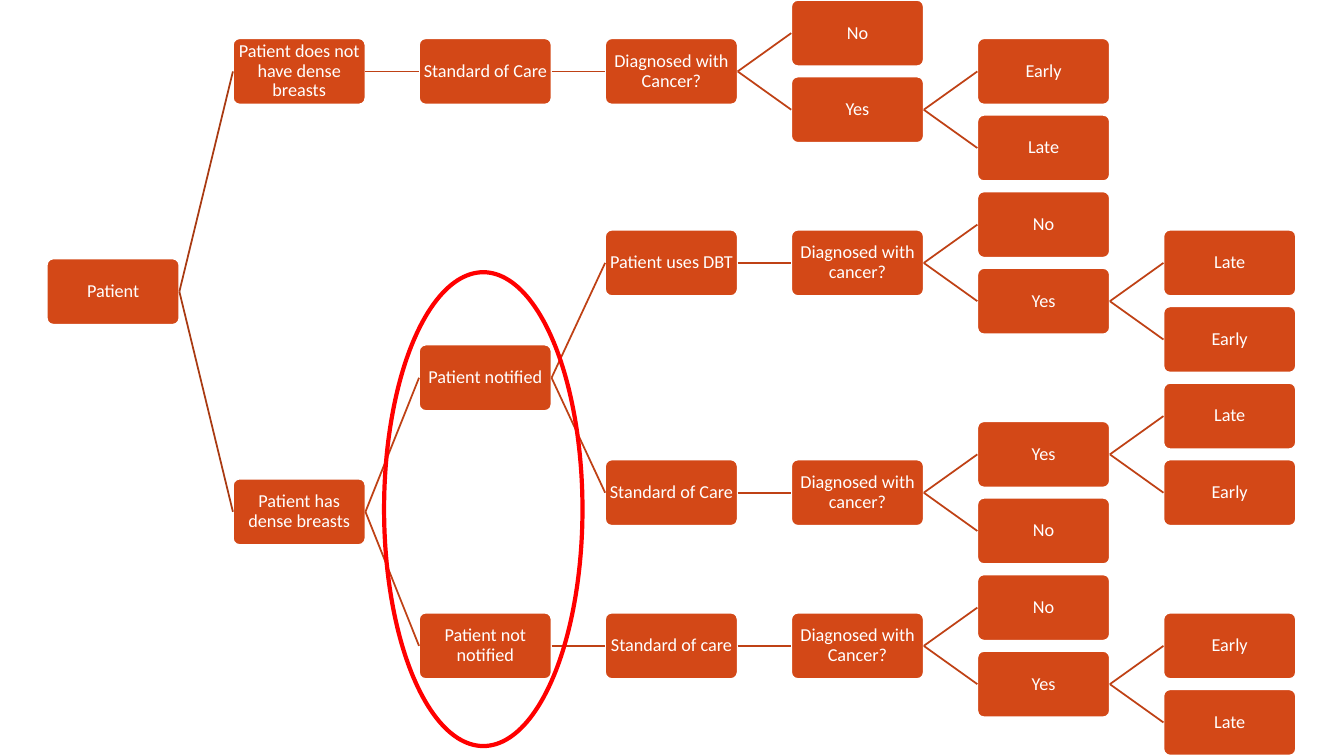
from lxml import etree
from pptx import Presentation
from pptx.dml.color import RGBColor
from pptx.enum import shapes, text
from pptx.oxml.ns import qn
from pptx.util import Cm, Pt

ORANGE = RGBColor(0xD3, 0x48, 0x17)
BRANCH = RGBColor(0xBF, 0x41, 0x15)
ROOT_BRANCH = RGBColor(0xA9, 0x3A, 0x12)
RED = RGBColor(0xFF, 0x00, 0x00)
WHITE = RGBColor(0xFF, 0xFF, 0xFF)

LEFT, COLUMN_PITCH, ROW_PITCH = 1.18, 4.69, 1.93
BOX_W, BOX_H = 3.34, 1.67
RIGHT_SITE, LEFT_SITE = 3, 1

# Label, column, row; each box branches from the latest box one column to its left.
TREE = [
    ("Patient", 0, 3.375),
    ("Patient does not have dense breasts", 1, 0.5),
    ("Standard of Care", 2, 0.5),
    ("Diagnosed with Cancer?", 3, 0.5),
    ("No", 4, 0),
    ("Yes", 4, 1),
    ("Early", 5, 0.5),
    ("Late", 5, 1.5),
    ("Patient has dense breasts", 1, 6.25),
    ("Patient notified", 2, 4.5),
    ("Patient uses DBT", 3, 3),
    ("Diagnosed with cancer?", 4, 3),
    ("No", 5, 2.5),
    ("Yes", 5, 3.5),
    ("Late", 6, 3),
    ("Early", 6, 4),
    ("Standard of Care", 3, 6),
    ("Diagnosed with cancer?", 4, 6),
    ("Yes", 5, 5.5),
    ("Late", 6, 5),
    ("Early", 6, 6),
    ("No", 5, 6.5),
    ("Patient not notified", 2, 8),
    ("Standard of care", 3, 8),
    ("Diagnosed with Cancer?", 4, 8),
    ("No", 5, 7.5),
    ("Yes", 5, 8.5),
    ("Early", 6, 8),
    ("Late", 6, 9),
]

prs = Presentation()
prs.slide_width, prs.slide_height = Cm(33.87), Cm(19.05)
s = prs.slides.add_slide(prs.slide_layouts[6])

latest = {}
for label, column, row in TREE:
    sp = s.shapes.add_shape(
        shapes.MSO_SHAPE.ROUNDED_RECTANGLE,
        Cm(LEFT + column * COLUMN_PITCH), Cm(row * ROW_PITCH), Cm(BOX_W), Cm(BOX_H))
    sp.adjustments[0] = 0.1
    sp.shadow.inherit = False
    sp.fill.solid()
    sp.fill.fore_color.rgb = ORANGE
    sp.line.color.rgb = WHITE
    sp.line.width = Pt(1.25)

    tf = sp.text_frame
    tf.word_wrap = True
    tf.vertical_anchor = text.MSO_ANCHOR.MIDDLE
    tf.margin_left = tf.margin_right = tf.margin_top = tf.margin_bottom = Cm(0.07)
    tf.text = label
    p = tf.paragraphs[0]
    p.alignment = text.PP_ALIGN.CENTER
    p.line_spacing = 0.9
    r = p.runs[0]
    r.font.name, r.font.size = "Calibri", Pt(13)
    r.font.color.rgb = WHITE

    latest[column] = sp
    if column:
        cxn = s.shapes.add_connector(shapes.MSO_CONNECTOR.STRAIGHT, 0, 0, 0, 0)
        cxn.begin_connect(latest[column - 1], RIGHT_SITE)
        cxn.end_connect(sp, LEFT_SITE)
        cxn.line.color.rgb = ROOT_BRANCH if column == 1 else BRANCH
        cxn.line.width = Pt(1.25)
        etree.SubElement(cxn._element.spPr, qn("a:effectLst"))

highlight = s.shapes.add_shape(
    shapes.MSO_SHAPE.OVAL, Cm(9.68), Cm(6.86), Cm(5), Cm(11.94))
highlight.shadow.inherit = False
highlight.fill.background()
highlight.line.color.rgb = RED
highlight.line.width = Pt(3)

prs.save("out.pptx")
